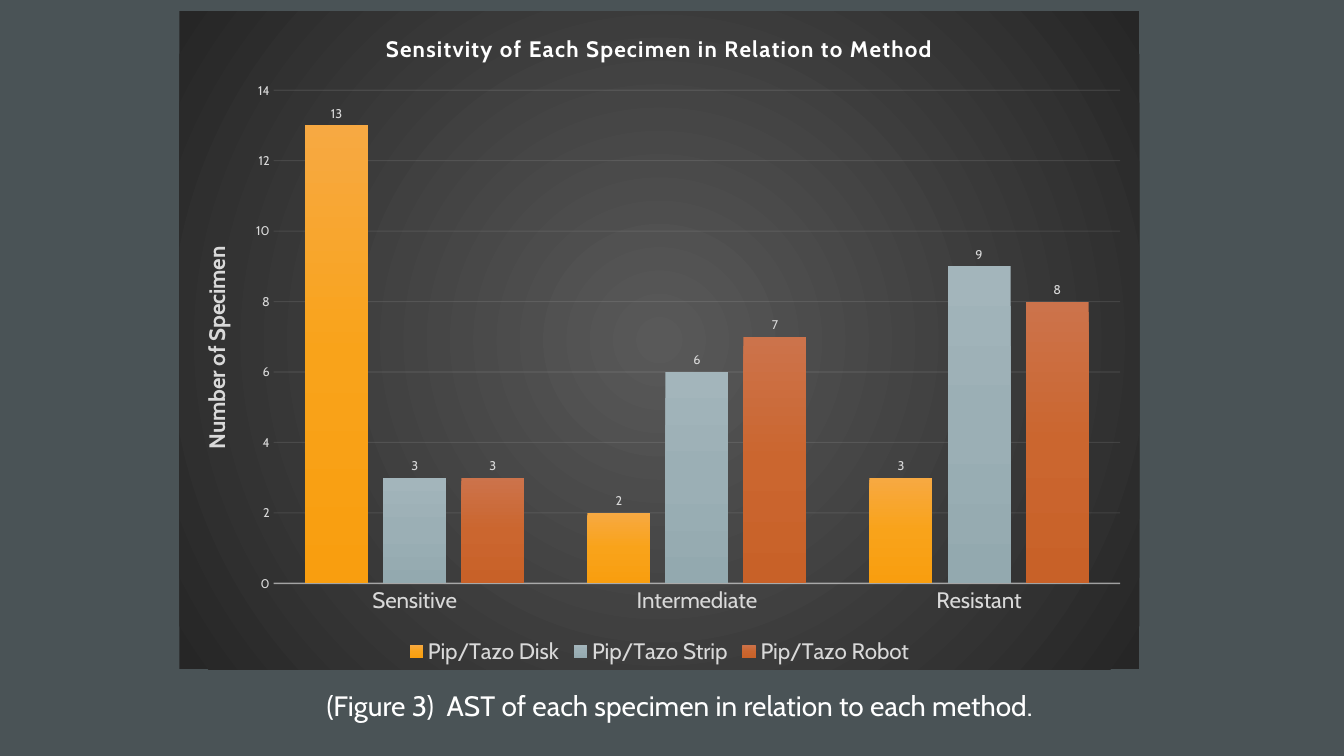
from dataclasses import dataclass
from typing import NamedTuple

from pptx import Presentation
from pptx import util as u
from pptx.chart import data as chart_data
from pptx.dml import color
from pptx.enum import chart as ce
from pptx.enum import text
from pptx.oxml import ns, parse_xml


@dataclass(frozen=True)
class Theme:
    font: str = "Cabin"
    page: str = "4A5356"
    white: str = "FFFFFF"
    label: str = "D9D9D9"
    rule: str = "F2F2F2"
    panel: tuple[str, ...] = ("595959", "262626")
    caption_size: int = 20
    heading_size: int = 16
    value_size: int = 9


class Method(NamedTuple):
    name: str
    counts: tuple[int, ...]
    shades: tuple[str, ...]


THEME = Theme()
RESULTS = ("Sensitive", "Intermediate", "Resistant")
METHODS = (
    Method("Pip/Tazo Disk", (13, 2, 3), ("F7A942", "F9A31A", "F99E0F")),
    Method("Pip/Tazo Strip", (3, 6, 9), ("A3B5BB", "9BAFB5", "93A9AF")),
    Method("Pip/Tazo Robot", (3, 7, 8), ("CC734B", "CB662F", "C86128")),
)
DOWNWARD = '<a:lin ang="5400000" scaled="0"/>'
FROM_CENTRE = (
    '<a:path path="circle">'
    '<a:fillToRect l="50000" t="50000" r="50000" b="50000"/></a:path>'
)


def set_font(font, size: int, shade: str, bold: bool = False) -> None:
    font.name = THEME.font
    font.size = u.Pt(size)
    font.bold = bold
    font.color.rgb = color.RGBColor.from_string(shade)


def gradient(shades: tuple[str, ...], direction: str):
    step = 100000 // (len(shades) - 1)
    stops = "".join(
        f'<a:gs pos="{i * step}"><a:srgbClr val="{shade}"/></a:gs>'
        for i, shade in enumerate(shades)
    )
    return parse_xml(
        f'<a:gradFill {ns.nsdecls("a")} rotWithShape="1">'
        f"<a:gsLst>{stops}</a:gsLst>{direction}</a:gradFill>"
    )


def set_rule(line, width: float, opacity: int) -> None:
    line.width = u.Pt(width)
    line.color.rgb = color.RGBColor.from_string(THEME.rule)
    shade = line._get_or_add_ln().find(".//" + ns.qn("a:srgbClr"))
    shade.append(
        parse_xml(f'<a:alpha {ns.nsdecls("a")} val="{opacity * 1000}"/>')
    )


def set_heading(frame, words: str, shade: str) -> None:
    frame.text = words
    set_font(frame.paragraphs[0].font, THEME.heading_size, shade, bold=True)


def style_axes(chart) -> None:
    results, counts = chart.category_axis, chart.value_axis
    for axis, size in (
        (results, THEME.heading_size),
        (counts, THEME.value_size),
    ):
        axis.major_tick_mark = axis.minor_tick_mark = ce.XL_TICK_MARK.NONE
        set_font(axis.tick_labels.font, size, THEME.label)
    set_rule(results.format.line, 1, 54)
    counts.minimum_scale, counts.maximum_scale, counts.major_unit = 0, 14, 2
    counts.format.line.fill.background()
    set_rule(counts.major_gridlines.format.line, 0.75, 10)
    frame = counts.axis_title.text_frame
    set_heading(frame, "Number of Specimen", THEME.label)
    frame._txBody.bodyPr.set("rot", "-5400000")
    frame._txBody.bodyPr.set("vert", "horz")


def style_series(plot) -> None:
    plot.gap_width, plot.overlap = 100, -24
    plot.vary_by_categories = False
    for series, method in zip(plot.series, METHODS):
        series.invert_if_negative = False
        series._element.get_or_add_spPr().append(
            gradient(method.shades, DOWNWARD)
        )
        labels = series.data_labels
        labels.show_value = True
        labels.position = ce.XL_LABEL_POSITION.OUTSIDE_END
        set_font(labels.font, THEME.value_size, THEME.label)


def add_sensitivity_chart(page) -> None:
    table = chart_data.CategoryChartData()
    table.categories = RESULTS
    for method in METHODS:
        table.add_series(method.name, method.counts)
    chart = page.shapes.add_chart(
        ce.XL_CHART_TYPE.COLUMN_CLUSTERED,
        u.Inches(1.78), u.Inches(0.11), u.Inches(9.52), u.Inches(6.53),
        table,
    ).chart
    set_font(chart.font, 10, THEME.white)
    panel = parse_xml(
        f'<c:spPr {ns.nsdecls("c", "a")}><a:ln><a:noFill/></a:ln></c:spPr>'
    )
    panel.insert(0, gradient(THEME.panel, FROM_CENTRE))
    chart._chartSpace.find(ns.qn("c:txPr")).addprevious(panel)

    chart.has_title = True
    frame = chart.chart_title.text_frame
    set_heading(
        frame, "Sensitvity of Each Specimen in Relation to Method", THEME.white
    )
    frame.paragraphs[0].font._element.set("spc", "100")
    chart.chart_title.include_in_layout = False

    chart.has_legend = True
    chart.legend.position = ce.XL_LEGEND_POSITION.BOTTOM
    chart.legend.include_in_layout = False
    set_font(chart.legend.font, THEME.heading_size, THEME.label)
    style_axes(chart)
    style_series(chart.plots[0])


def add_caption(page) -> None:
    box = page.shapes.add_textbox(
        u.Inches(3.14), u.Inches(6.78), u.Inches(7.35), u.Inches(0.44)
    )
    frame = box.text_frame
    frame.word_wrap = True
    frame.auto_size = text.MSO_AUTO_SIZE.SHAPE_TO_FIT_TEXT
    para = frame.paragraphs[0]
    para.text = "(Figure 3)  AST of each specimen in relation to each method."
    set_font(para.font, THEME.caption_size, THEME.white)


def main() -> None:
    deck = Presentation()
    deck.slide_width, deck.slide_height = u.Inches(13.33), u.Inches(7.5)
    page = deck.slides.add_slide(deck.slide_layouts.get_by_name("Blank"))
    page.background.fill.solid()
    page.background.fill.fore_color.rgb = color.RGBColor.from_string(THEME.page)
    add_sensitivity_chart(page)
    add_caption(page)
    deck.save("out.pptx")


if __name__ == "__main__":
    main()
